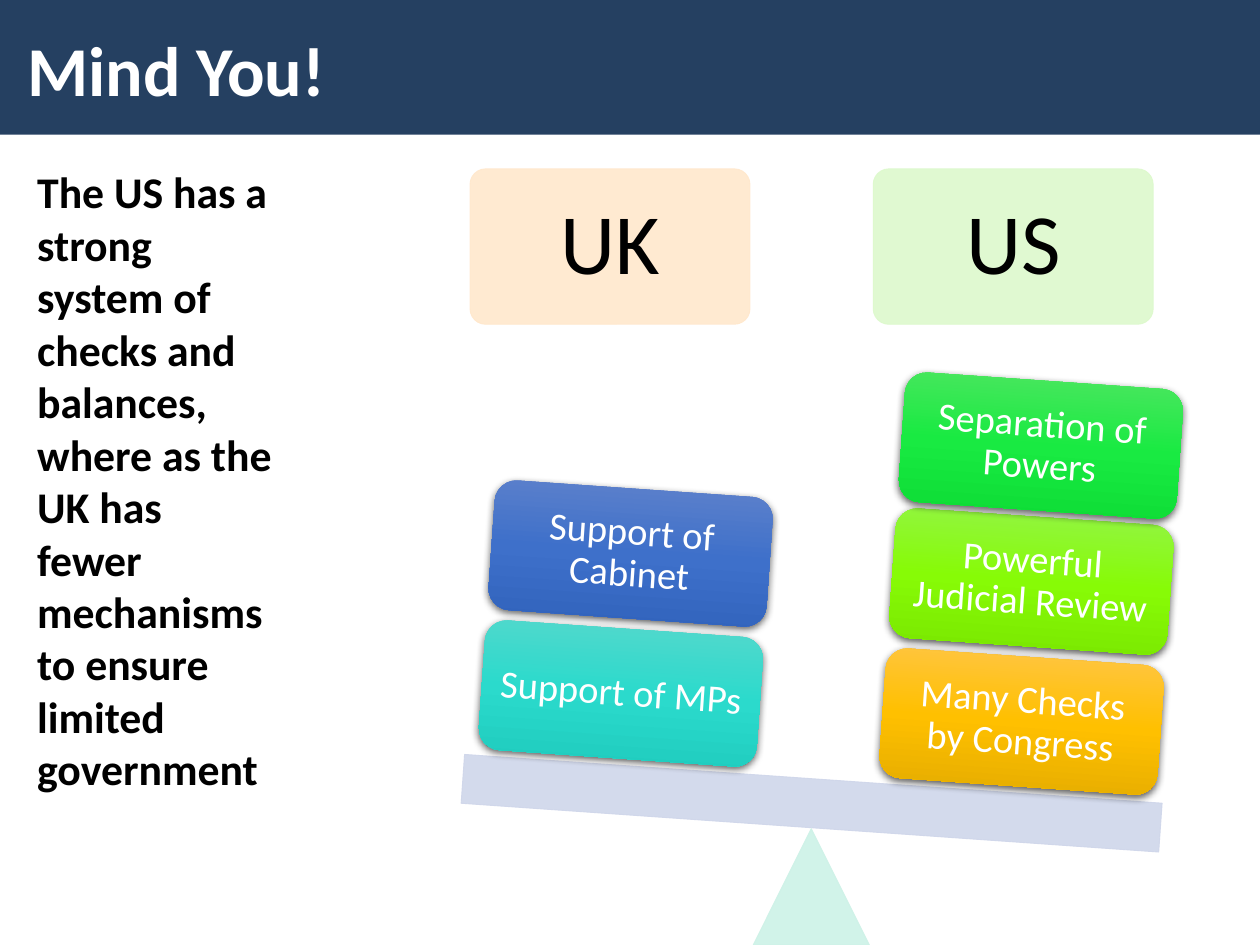
import math
import pptx
import pptx.util
import pptx.dml.color
import pptx.enum.shapes
import pptx.enum.text
import pptx.oxml
import pptx.oxml.ns
from lxml import etree

Pt = pptx.util.Pt
qn = pptx.oxml.ns.qn
KIND = pptx.enum.shapes.MSO_SHAPE
ALIGN = pptx.enum.text.PP_ALIGN
ANCHOR = pptx.enum.text.MSO_ANCHOR

COLORS = {
    "navy": "254061", "white": "FFFFFF", "black": "000000",
    "peach": "FFE8CC", "mint": "DDF9CC", "aqua": "CDF2E7", "mist": "CFD6EA",
}
TITLE = "Mind You!"
BODY = ("The US has a strong system of checks and balances, where as the UK "
        "has fewer mechanisms to ensure limited government")
# Each side: head, head color, left of head, left of stack, blocks from the bottom up
SIDES = [
    ("UK", "peach", 268.6, 275.2, [
        ("Support of MPs", ("58D8CC", "2BDACC", "1ECBBD")),
        ("Support of Cabinet", ("6183CB", "3E70CA", "3062BB")),
    ]),
    ("US", "mint", 499, 504.2, [
        ("Many Checks by Congress", ("FFC64B", "FFC000", "E3AB00")),
        ("Powerful Judicial Review", ("94F44C", "87FB06", "78E500")),
        ("Separation of Powers", ("51E663", "19EA42", "0CDB34")),
    ]),
]
TILT = 4
SLOPE = math.tan(math.radians(TILT))
LIFTS = (0, 80, 157.7)
BASE = 359.2  # top of the lowest block on the left side

deck = pptx.Presentation()
deck.slide_width, deck.slide_height = Pt(720), Pt(540)
slide = deck.slides.add_slide(deck.slide_layouts[6])


def paint(name):
    return pptx.dml.color.RGBColor.from_string(COLORS[name])


def write(shape, text, size=22, color="white", bold=False, align=ALIGN.CENTER,
          anchor=ANCHOR.MIDDLE, inset=None, lead=None):
    frame = shape.text_frame
    frame.word_wrap = True
    frame.vertical_anchor = anchor
    if inset is not None:
        frame.margin_left = frame.margin_right = Pt(inset)
        frame.margin_top = frame.margin_bottom = Pt(inset)
    para = frame.paragraphs[0]
    para.alignment = align
    if lead:
        para.line_spacing = lead
    run = para.add_run()
    run.text = text
    font = run.font
    font.name, font.size, font.bold = "Calibri", Pt(size), bold
    font.color.rgb = paint(color)


def add_box(text, place, **form):
    box = slide.shapes.add_textbox(*map(Pt, place))
    write(box, text, align=ALIGN.LEFT, anchor=ANCHOR.TOP, **form)


def add_form(kind, place, color=None, turn=0, clear=True):
    """Add a flat shape; clear makes its fill and thin edge 90% opaque."""
    shape = slide.shapes.add_shape(kind, *map(Pt, place))
    shape.shadow.inherit = False
    shape.rotation = turn
    shape.line.fill.background()
    if color:
        shape.fill.solid()
        shape.fill.fore_color.rgb = paint(color)
    if color and clear:
        shape.line.color.rgb = paint(color)
        shape.line.width = Pt(0.5)
        for tint in shape.element.spPr.iter(qn("a:srgbClr")):
            etree.SubElement(tint, qn("a:alpha"), val="90000")
    return shape


def shade(shape, tints):
    """Fill from top to bottom through three evenly spaced tints."""
    shape.fill.gradient()
    shape.fill.gradient_angle = 270
    stops = shape.element.spPr.find(".//" + qn("a:gsLst"))
    for stop in list(stops):
        stops.remove(stop)
    for step, tint in enumerate(tints):
        stop = etree.SubElement(stops, qn("a:gs"), pos=str(step * 50000))
        etree.SubElement(stop, qn("a:srgbClr"), val=tint)


def drop(shape):
    """Cast a soft shadow straight down."""
    effects = shape.element.spPr.find(qn("a:effectLst"))
    cast = etree.SubElement(effects, qn("a:outerShdw"), blurRad=str(Pt(4.5)),
                            dist=str(Pt(1.5)), dir="5400000", rotWithShape="0")
    tint = etree.SubElement(cast, qn("a:srgbClr"), val=COLORS["black"])
    etree.SubElement(tint, qn("a:alpha"), val="63000")


add_form(KIND.RECTANGLE, (0, -2, 720, 79), "navy", clear=False)
add_box(TITLE, (8.6, 11.5, 698, 55.4), size=40, bold=True)
add_box(BODY, (14.2, 90.7, 149, 76.3), size=25, color="black", bold=True)

for head, color, left, _, _ in SIDES:
    card = add_form(KIND.ROUNDED_RECTANGLE, (left, 96.5, 160, 88.8), color)
    card.adjustments[0] = 0.1
    write(card, head, size=49, color="black", inset=14.4, lead=0.9)

add_form(KIND.ISOSCELES_TRIANGLE, (430.4, 473.5, 66.4, 66.5), "aqua")
add_form(KIND.RECTANGLE, (264, 445, 399.6, 28), "mist", turn=TILT)

for _, _, _, foot, blocks in SIDES:
    floor = BASE + (foot - SIDES[0][3]) * SLOPE
    for lift, (text, tints) in zip(LIFTS, blocks):
        place = (foot + lift * SLOPE, floor - lift, 159.2, 74.2)
        block = add_form(KIND.ROUNDED_RECTANGLE, place, turn=TILT)
        shade(block, tints)
        drop(block)
        write(block, text, inset=6.5, lead=0.9)

deck.save("out.pptx")
